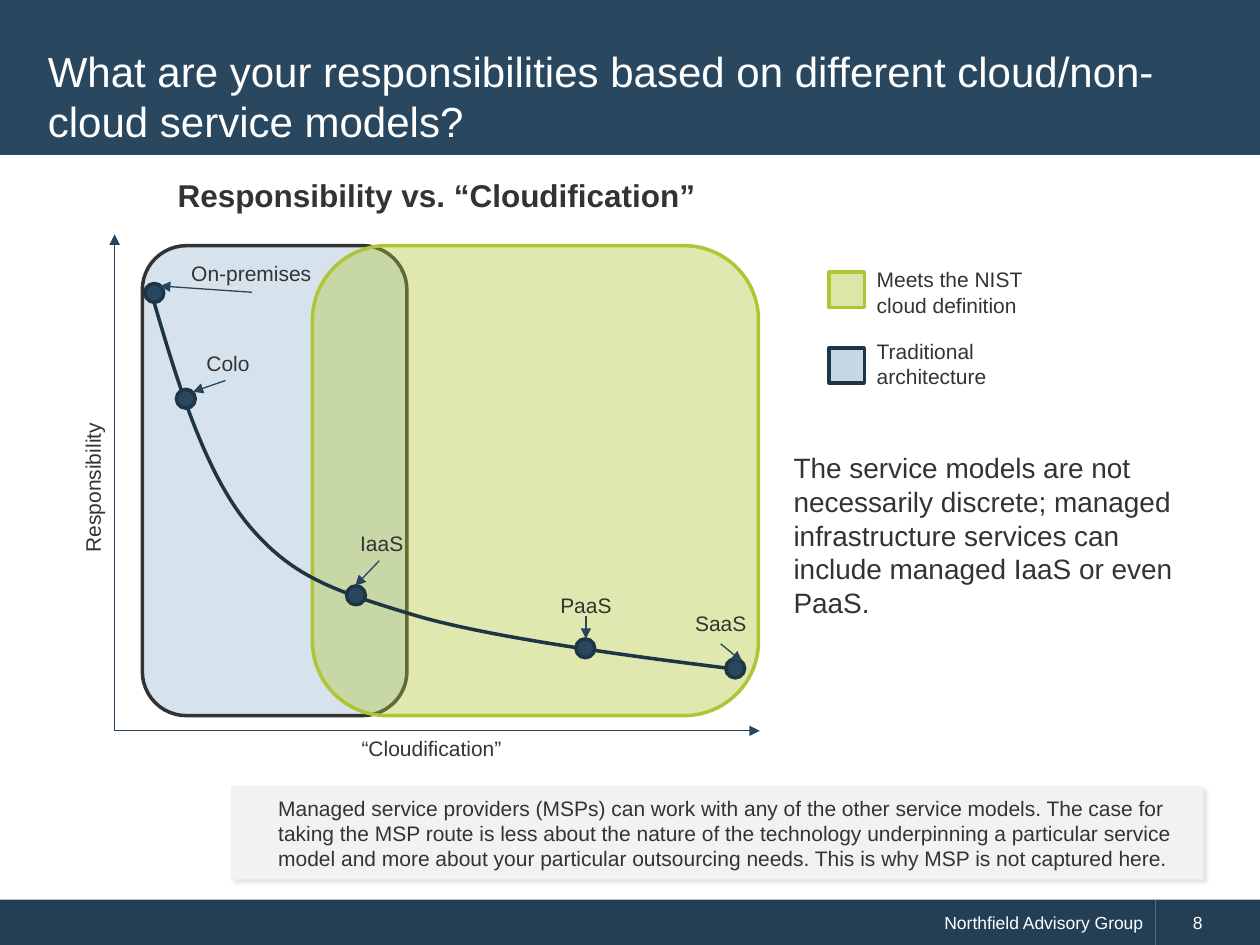
import pptx
import pptx.dml.color
import pptx.enum.shapes
import pptx.enum.text
import pptx.oxml
import pptx.oxml.ns
import pptx.util

Inches = pptx.util.Inches
Pt = pptx.util.Pt
qn = pptx.oxml.ns.qn
SHAPE = pptx.enum.shapes.MSO_SHAPE
ALIGN = pptx.enum.text.PP_ALIGN
ANCHOR = pptx.enum.text.MSO_ANCHOR

COLORS = {
    "header": "29475F", "footer": "243F54", "axis": "27465E", "curve": "1E3546",
    "text": "333333", "white": "FFFFFF", "green": "B0C534", "blue": "96B8D2",
    "note": "F2F2F2", "shadow": "000000",
}
FONT = "Arial"
DOT = 0.15

# Start point, then control, control, end for each curve segment
CURVE = [(1.2, 2.32),
         (1.4, 3.01), (1.61, 3.71), (1.95, 4.14),
         (2.3, 4.57), (2.62, 4.68), (3.28, 4.88),
         (3.94, 5.08), (5.34, 5.25), (5.91, 5.32)]

# Name, label box (left, top, width), dot corner, arrow start, arrow end
MODELS = [
    ("On-premises", (1.41, 2.02, 1.17), (1.15, 2.25), (2, 2.32), (1.27, 2.27)),
    ("Colo", (1.45, 2.73, 0.72), (1.4, 3.09), (1.79, 3.02), (1.53, 3.11)),
    ("IaaS", (2.67, 4.16, 0.72), (2.75, 4.65), (3.01, 4.45), (2.82, 4.65)),
    ("PaaS", (4.29, 4.65, 0.72), (4.57, 5.07), (4.65, 4.89), (4.65, 5.07)),
    ("SaaS", (5.36, 4.8, 0.72), (5.76, 5.23), (5.72, 5.11), (5.89, 5.25)),
]

# Label, label top, swatch top, fill, opacity in percent, line
LEGEND = [
    ("Meets the NIST cloud definition", 2.07, 2.16, "green", 42, "green"),
    ("Traditional architecture", 2.64, 2.76, "blue", 54, "curve"),
]


def rgb(name):
    return pptx.dml.color.RGBColor.from_string(COLORS[name])


def write(tf, text, size, color="text", align=ALIGN.LEFT, bold=False,
          anchor=ANCHOR.TOP, indent=0):
    tf.word_wrap = True
    tf.auto_size = pptx.enum.text.MSO_AUTO_SIZE.NONE
    tf.vertical_anchor = anchor
    p = tf.paragraphs[0]
    p.alignment = align
    if indent:
        p._p.get_or_add_pPr().set("marL", str(Inches(indent)))
    r = p.add_run()
    r.text = text
    r.font.name = FONT
    r.font.size = Pt(size)
    r.font.bold = bold
    r.font.color.rgb = rgb(color)


def add_label(s, text, x, y, w, h=0.3, size=12, **style):
    sp = s.shapes.add_textbox(Inches(x), Inches(y), Inches(w), Inches(h))
    write(sp.text_frame, text, size, **style)
    return sp


def add_box(s, kind, x, y, w, h, fill, line=None, opacity=None):
    sp = s.shapes.add_shape(kind, Inches(x), Inches(y), Inches(w), Inches(h))
    sp.shadow.inherit = False
    sp.fill.solid()
    sp.fill.fore_color.rgb = rgb(fill)
    if opacity:
        clr = sp._element.spPr.find(".//" + qn("a:srgbClr"))
        pptx.oxml.ns  # namespace helpers
        alpha = clr.makeelement(qn("a:alpha"), {"val": str(opacity * 1000)})
        clr.append(alpha)
    if line:
        sp.line.color.rgb = rgb(line)
        sp.line.width = Pt(2)
    else:
        sp.line.fill.background()
    return sp


def add_arrow(s, start, end):
    cn = s.shapes.add_connector(pptx.enum.shapes.MSO_CONNECTOR.STRAIGHT,
                                *(Inches(v) for v in start + end))
    cn.line.color.rgb = rgb("axis")
    cn.line.width = Pt(0.75)
    ln = cn.line._get_or_add_ln()
    ln.append(ln.makeelement(qn("a:tailEnd"), {"type": "triangle"}))
    spPr = cn._element.spPr
    spPr.append(spPr.makeelement(qn("a:effectLst"), {}))


def bezier(a, b, c, d, t):
    u = 1 - t
    return tuple(Inches(u**3 * i + 3 * u * u * t * j + 3 * u * t * t * k + t**3 * m)
                 for i, j, k, m in zip(a, b, c, d))


def add_curve(s, nodes, steps=24):
    points = [bezier(*nodes[i:i + 4], n / steps)
              for i in range(0, len(nodes) - 1, 3) for n in range(1, steps + 1)]
    fb = s.shapes.build_freeform(*(Inches(v) for v in nodes[0]), scale=1.0)
    fb.add_line_segments(points, close=False)
    sp = fb.convert_to_shape()
    sp.shadow.inherit = False
    sp.fill.background()
    sp.line.color.rgb = rgb("curve")
    sp.line.width = Pt(2)


def add_shadow(sp):
    effects = sp._element.spPr.find(qn("a:effectLst"))
    effects.append(pptx.oxml.parse_xml(
        '<a:outerShdw xmlns:a="http://schemas.openxmlformats.org/drawingml/2006/main"'
        f' blurRad="{Pt(2)}" dist="{Pt(2)}" dir="2700000">'
        f'<a:srgbClr val="{COLORS["shadow"]}"><a:alpha val="10000"/></a:srgbClr>'
        '</a:outerShdw>'))


def add_frame(s):
    add_box(s, SHAPE.RECTANGLE, 0, 0, 10, 1.23, "header")
    for text, x, w, align, indent in [
            ("Northfield Advisory Group", 0, 9.17, ALIGN.RIGHT, 0.29),
            ("8", 9.17, 0.83, ALIGN.LEFT, 0.2)]:
        sp = add_box(s, SHAPE.RECTANGLE, x, 7.14, w, 0.37, "footer")
        write(sp.text_frame, text, 10, "white", align,
              anchor=ANCHOR.MIDDLE, indent=indent)


def add_title(s, text):
    sp = s.shapes.title
    sp.left, sp.top, sp.width, sp.height = map(Inches, (0.28, 0.28, 9.43, 0.96))
    write(sp.text_frame, text, 24, "white", anchor=ANCHOR.MIDDLE)
    # Bring the title in front of the header band
    s.shapes._spTree.append(sp._element)


def add_diagram(s):
    add_label(s, "Responsibility vs. “Cloudification”", 0.88, 1.35, 5.17, 0.4, 18,
              align=ALIGN.CENTER, bold=True)
    # Architecture regions
    for x, w, fill, line in [(1.13, 2.1, "blue", "text"), (2.48, 3.54, "green", "green")]:
        add_box(s, SHAPE.ROUNDED_RECTANGLE, x, 1.95, w, 3.73, fill, line, 39)
    add_curve(s, CURVE)
    # Axes
    origin = (0.91, 5.8)
    add_arrow(s, origin, (0.91, 1.86))
    add_arrow(s, origin, (6.03, 5.8))
    add_label(s, "“Cloudification”", 2.48, 5.79, 1.89, align=ALIGN.CENTER)
    add_label(s, "Responsibility", 0.1, 3.72, 1.27, align=ALIGN.CENTER).rotation = 270
    # Service models
    for name, box, dot, start, end in MODELS:
        add_box(s, SHAPE.OVAL, *dot, DOT, DOT, "header", "curve")
        add_label(s, name, *box, align=ALIGN.CENTER)
        add_arrow(s, start, end)


def add_legend(s):
    for text, text_y, y, fill, opacity, line in LEGEND:
        add_box(s, SHAPE.RECTANGLE, 6.58, y, 0.28, 0.28, fill, line, opacity)
        add_label(s, text, 6.86, text_y, 1.41, 0.5)


def main():
    prs = pptx.Presentation()
    prs.slide_width, prs.slide_height = Inches(10), Inches(7.5)
    s = prs.slides.add_slide(prs.slide_layouts[5])

    add_frame(s)
    add_title(s, "What are your responsibilities based on different "
                 "cloud/non-cloud service models?")
    add_diagram(s)
    add_legend(s)

    # Commentary
    add_label(s, "The service models are not necessarily discrete; managed "
                 "infrastructure services can include managed IaaS or even PaaS.",
              6.2, 3.53, 3.33, 1.72, 16)
    note = add_box(s, SHAPE.RECTANGLE, 1.83, 6.24, 7.72, 0.74, "note")
    add_shadow(note)
    write(note.text_frame,
          "Managed service providers (MSPs) can work with any of the other service "
          "models. The case for taking the MSP route is less about the nature of the "
          "technology underpinning a particular service model and more about your "
          "particular outsourcing needs. This is why MSP is not captured here.",
          12, anchor=ANCHOR.MIDDLE, indent=0.28)

    prs.save("out.pptx")


if __name__ == "__main__":
    main()
